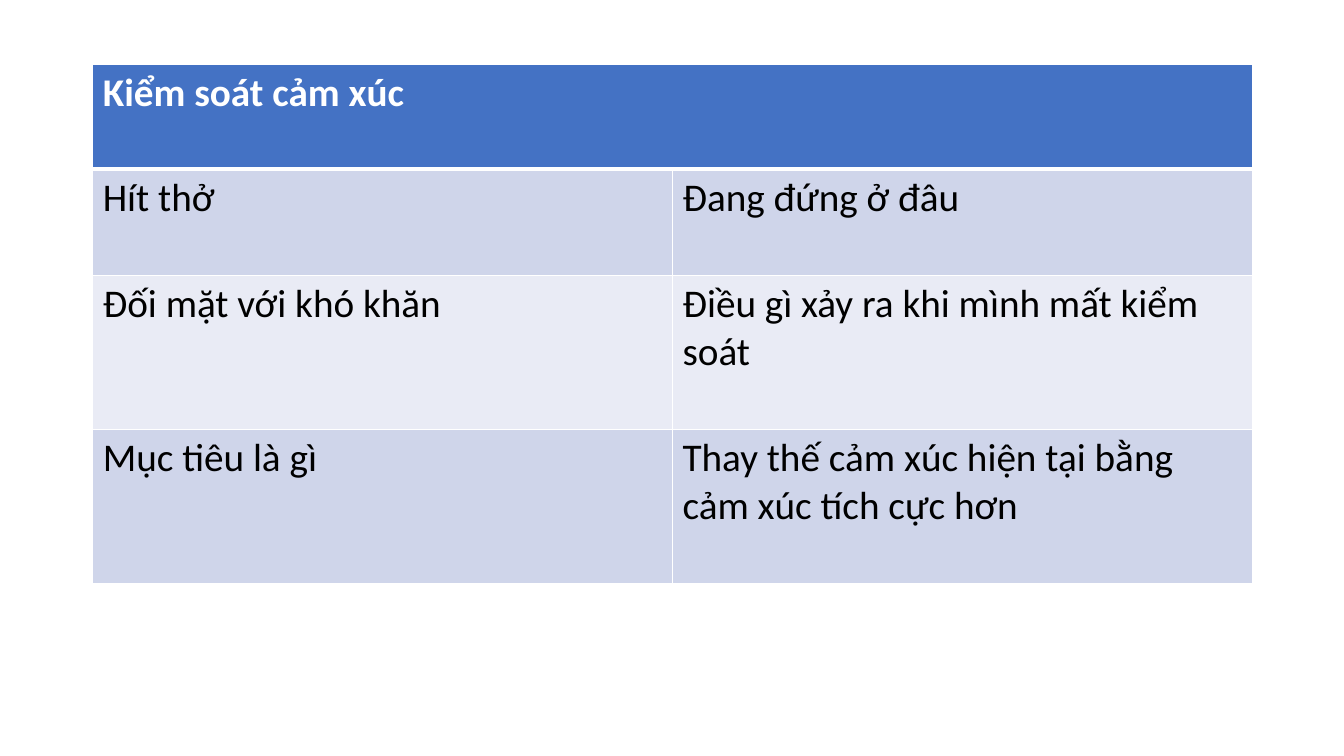
import pptx
import pptx.dml.color
import pptx.oxml
import pptx.oxml.ns
import pptx.util
from pptx.util import Inches

RGBColor = pptx.dml.color.RGBColor
WHITE = RGBColor(0xFF, 0xFF, 0xFF)
BLACK = RGBColor(0x00, 0x00, 0x00)
BLUE = RGBColor(0x44, 0x72, 0xC4)
BAND_DARK = RGBColor(0xCF, 0xD5, 0xEA)
BAND_LIGHT = RGBColor(0xE9, 0xEB, 0xF5)

HEADING = "Kiểm soát cảm xúc"
STEPS = [
    ("Hít thở", "Đang đứng ở đâu"),
    ("Đối mặt với khó khăn", "Điều gì xảy ra khi mình mất kiểm soát"),
    ("Mục tiêu là gì", "Thay thế cảm xúc hiện tại bằng cảm xúc tích cực hơn"),
]
ROW_HEIGHTS = [1.04, 1.05, 1.53, 1.53]


class SlideBuilder:
    font = "Calibri"
    size = pptx.util.Pt(28)

    def __init__(self, prs):
        self.s = prs.slides.add_slide(prs.slide_layouts[6])

    def table(self, left, top, col_width, heading, rows, heights):
        n_cols = len(rows[0])
        frame = self.s.shapes.add_table(
            len(heights), n_cols, Inches(left), Inches(top),
            Inches(col_width * n_cols), Inches(sum(heights)))
        table = frame.table
        for row, height in zip(table.rows, heights):
            row.height = Inches(height)
        table.cell(0, 0).merge(table.cell(0, n_cols - 1))
        for c in range(n_cols):
            self.cell(table.cell(0, c), heading if c == 0 else "",
                      BLUE, WHITE, bold=True, bottom=3)
        for i, texts in enumerate(rows):
            fill = BAND_LIGHT if i % 2 else BAND_DARK
            for c, text in enumerate(texts):
                self.cell(table.cell(i + 1, c), text, fill, BLACK,
                          top=1 if i else 3)

    def cell(self, cell, text, fill, color, bold=False, top=1, bottom=1):
        self.borders(cell, {"L": 1, "R": 1, "T": top, "B": bottom})
        cell.fill.solid()
        cell.fill.fore_color.rgb = fill
        if text:
            r = cell.text_frame.paragraphs[0].add_run()
            r.text = text
            r.font.name = self.font
            r.font.size = self.size
            r.font.bold = bold
            r.font.color.rgb = color

    def borders(self, cell, widths):
        """Add white cell edges, with widths in points by side letter."""
        tc_pr = cell._tc.get_or_add_tcPr()
        for side, width in widths.items():
            tc_pr.append(pptx.oxml.parse_xml(
                f'<a:ln{side} {pptx.oxml.ns.nsdecls("a")} w="{pptx.util.Pt(width)}">'
                f'<a:solidFill><a:srgbClr val="{WHITE}"/></a:solidFill>'
                f'</a:ln{side}>'))


def main():
    prs = pptx.Presentation()
    prs.slide_width = Inches(13.33)
    prs.slide_height = Inches(7.5)
    SlideBuilder(prs).table(0.92, 0.64, 5.75, HEADING, STEPS, ROW_HEIGHTS)
    prs.save("out.pptx")


if __name__ == "__main__":
    main()
